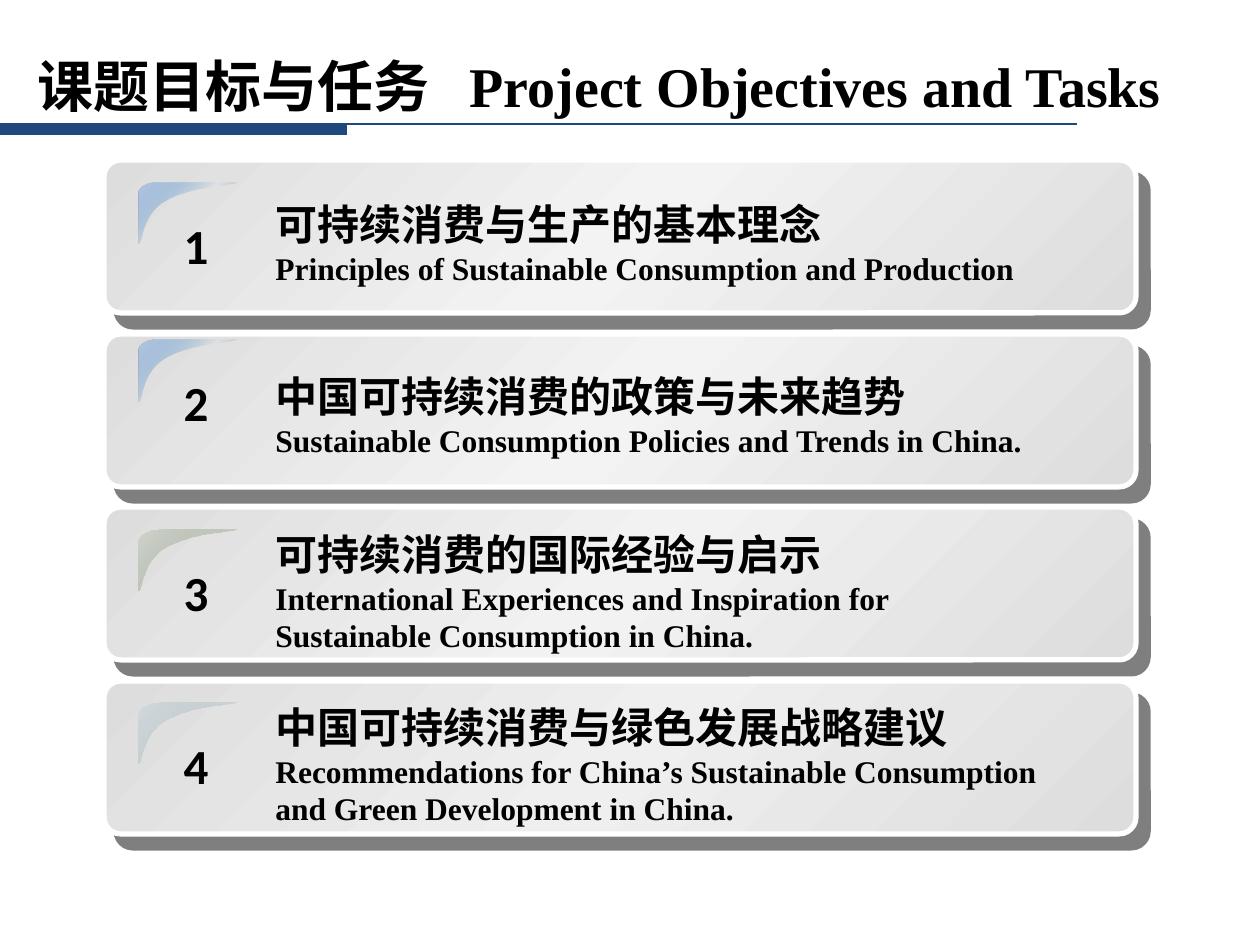
from lxml.etree import SubElement
from pptx import Presentation
from pptx.dml.color import RGBColor
from pptx.enum.shapes import MSO_CONNECTOR, MSO_SHAPE
from pptx.enum.text import MSO_ANCHOR, MSO_AUTO_SIZE, PP_ALIGN
from pptx.oxml.ns import qn
from pptx.util import Emu, Pt

# Content
TITLE = ("课题目标与任务", "Project Objectives and Tasks")
BLUE_SHINE = [(0, "B8C8E4", 100), (50, "3984C9", 0), (100, "B8C8E4", 100)]
# Chinese, English, text offset and width, corner offset, mid grey, corner stops
TASKS = [
    ("可持续消费与生产的基本理念",
     "Principles of Sustainable Consumption and Production",
     32, 893, 23, "F3F3F3", BLUE_SHINE),
    ("中国可持续消费的政策与未来趋势",
     "Sustainable Consumption Policies and Trends in China.",
     30, 893, 6, "F3F3F3", BLUE_SHINE),
    ("可持续消费的国际经验与启示",
     "International Experiences and Inspiration for Sustainable Consumption in China.",
     15, 759, 23, "F2F2F2", [(0, "D2D6CF", 100), (100, "6E815B", 0)]),
    ("中国可持续消费与绿色发展战略建议",
     "Recommendations for China’s Sustainable Consumption and Green Development in China.",
     14, 843, 22, "EFEFEF", [(0, "D3DADD", 100), (100, "90A8B0", 0)]),
]
COLORS = {"text": "000000", "rule": "1F497D", "edge": "DDDDDD",
          "border": "FFFFFF", "shadow": "000000"}
CJK, SERIF, SANS = "Noto Sans CJK SC", "Times New Roman", "Calibri"

# Layout in px
CARD_X, CARD_Y, CARD_W, CARD_H = 104, 160, 1032, 153
TWO_PITCHES = 347
CORNER_X, CORNER_W, CORNER_H, TEXT_X = 139, 99, 62, 263
# Corner outline within its own box
CORNER_OUTLINE = [
    ("moveTo", [(20, 0)]),
    ("cubicBezTo", [(9, 0), (0, 5), (0, 11)]),
    ("lnTo", [(0, 61)]),
    ("cubicBezTo", [(5, 62), (2, 32), (28, 18)]),
    ("cubicBezTo", [(52, 4), (99, 3), (98, 0)]),
    ("lnTo", [(20, 0)]),
    ("close", []),
]


def px(v):
    return Emu(round(v * 914400 / 126))


def rgb(name):
    return RGBColor.from_string(COLORS[name])


def set_font(r, name, size):
    r.font.name, r.font.size, r.font.bold = name, Pt(size), True
    r.font.color.rgb = rgb("text")
    SubElement(r.font._element, qn("a:ea")).set("typeface", name)


def add_color(parent, color, alpha):
    clr = SubElement(parent, qn("a:srgbClr"))
    clr.set("val", color)
    if alpha < 100:
        SubElement(clr, qn("a:alpha")).set("val", str(alpha * 1000))


def set_gradient(sp, stops):
    sp.fill.gradient()
    grad = sp._element.spPr.find(qn("a:gradFill"))
    for child in list(grad):
        grad.remove(child)
    gs_list = SubElement(grad, qn("a:gsLst"))
    for pos, color, alpha in stops:
        gs = SubElement(gs_list, qn("a:gs"))
        gs.set("pos", str(pos * 1000))
        add_color(gs, color, alpha)
    lin = SubElement(grad, qn("a:lin"))
    lin.set("ang", "2700000")
    lin.set("scaled", "0")


def add_shadow(sp):
    sp.shadow.inherit = False
    shadow = SubElement(sp._element.spPr.find(qn("a:effectLst")), qn("a:outerShdw"))
    for key, val in (("dist", Pt(10.6)), ("dir", 49 * 60000),
                     ("algn", "ctr"), ("rotWithShape", 0)):
        shadow.set(key, str(val))
    add_color(shadow, COLORS["shadow"], 50)


def add_corner(shapes, top, shine):
    right, bottom = CORNER_X + CORNER_W, top + CORNER_H
    fb = shapes.build_freeform(px(CORNER_X), px(top))
    fb.add_line_segments([(px(right), px(top)), (px(right), px(bottom))], close=True)
    corner = fb.convert_to_shape()
    # Curved outline in place of the straight one
    outline = next(corner._element.iter(qn("a:path")))
    for child in list(outline):
        outline.remove(child)
    for command, points in CORNER_OUTLINE:
        step = SubElement(outline, qn("a:" + command))
        for x, y in points:
            pt = SubElement(step, qn("a:pt"))
            pt.set("x", str(px(x)))
            pt.set("y", str(px(y)))
    set_gradient(corner, shine)
    corner.line.fill.background()
    corner.shadow.inherit = False


def add_text(shapes, box, lines, wrap=True, align=PP_ALIGN.LEFT):
    tf = shapes.add_textbox(*map(px, box)).text_frame
    tf.word_wrap = wrap
    tf.auto_size = MSO_AUTO_SIZE.SHAPE_TO_FIT_TEXT
    tf.text = "\n".join(text for text, _, _ in lines)
    for p, (_, name, size) in zip(tf.paragraphs, lines):
        p.alignment = align
        set_font(p.runs[0], name, size)


def add_card(s, i, task):
    chinese, english, text_dy, text_w, corner_dy, mid, shine = task
    top = CARD_Y + (i * TWO_PITCHES + 1) // 2
    shapes = s.shapes.add_group_shape().shapes

    card = shapes.add_shape(MSO_SHAPE.ROUNDED_RECTANGLE,
                            *map(px, (CARD_X, top, CARD_W, CARD_H)))
    card.adjustments[0] = 0.11
    set_gradient(card, [(0, COLORS["edge"], 100), (50, mid, 100), (100, COLORS["edge"], 100)])
    card.line.color.rgb = rgb("border")
    card.line.width = Pt(3)
    add_shadow(card)

    corner_y = top + corner_dy
    add_corner(shapes, corner_y, shine)
    add_text(shapes, (171, corner_y + 26, 50, 72), [(str(i + 1), SANS, 28)],
             wrap=False, align=PP_ALIGN.CENTER)
    text_h = 102 if text_dy > 20 else 140
    add_text(shapes, (TEXT_X, top + text_dy, text_w, text_h),
             [(chinese, CJK, 24), (english, SERIF, 18)])


def main():
    prs = Presentation()
    prs.slide_width, prs.slide_height = px(1260), px(945)
    s = prs.slides.add_slide(prs.slide_layouts[5])

    # Rule under the title
    rule = s.shapes.add_connector(MSO_CONNECTOR.STRAIGHT, *map(px, (0, 124, 1077, 124)))
    rule.line.color.rgb = rgb("rule")
    rule.line.width = Pt(1.5)
    SubElement(rule._element.spPr, qn("a:effectLst"))
    bar = s.shapes.add_shape(MSO_SHAPE.RECTANGLE, *map(px, (0, 125, 347, 10)))
    bar.fill.solid()
    bar.fill.fore_color.rgb = rgb("rule")
    bar.line.fill.background()
    bar.shadow.inherit = False

    # Title, its two languages set apart by a tab stop
    title = s.shapes.title
    title.left, title.top, title.width, title.height = map(px, (25, 46, 1211, 78))
    tf = title.text_frame
    tf.vertical_anchor = MSO_ANCHOR.MIDDLE
    tf.word_wrap = True
    p = tf.paragraphs[0]
    p.alignment = PP_ALIGN.LEFT
    tabs = SubElement(p._p.get_or_add_pPr(), qn("a:tabLst"))
    tab = SubElement(tabs, qn("a:tab"))
    tab.set("pos", str(px(432)))
    tab.set("algn", "l")
    for text, name in zip((TITLE[0] + "\t", TITLE[1]), (CJK, SERIF)):
        r = p.add_run()
        r.text = text
        set_font(r, name, 32)

    # Task cards
    for i, task in enumerate(TASKS):
        add_card(s, i, task)

    prs.save("out.pptx")


if __name__ == "__main__":
    main()
